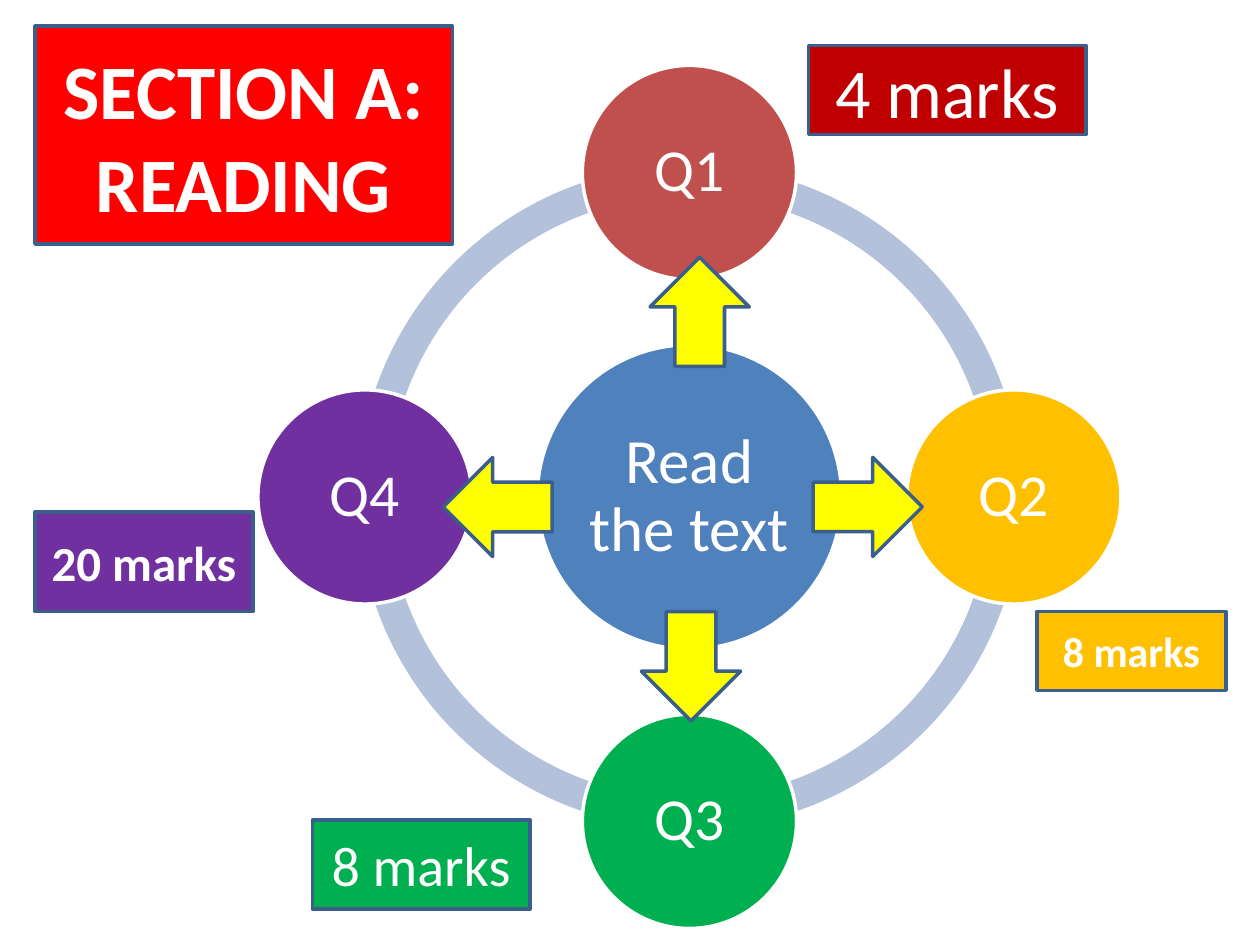
from pptx import Presentation
from pptx.dml.color import RGBColor
from pptx.enum import shapes, text
from pptx.util import Pt

KIND = shapes.MSO_SHAPE
WHITE, BORDER = "FFFFFF", "3A5F8C"
RED, YELLOW, AMBER, GREEN, PURPLE = "FF0000", "FFFF00", "FFC000", "00B050", "7030A0"


def paint(shape, fill, line=None):
    shape.fill.solid()
    shape.fill.fore_color.rgb = RGBColor.from_string(fill)
    if line:
        shape.line.color.rgb = RGBColor.from_string(line)
        shape.line.width = Pt(2)
    else:
        shape.line.fill.background()


def write(shape, words, size, bold=False):
    frame = shape.text_frame
    frame.text = words
    frame.word_wrap = True
    frame.auto_size = text.MSO_AUTO_SIZE.NONE
    frame.vertical_anchor = text.MSO_ANCHOR.MIDDLE
    para = frame.paragraphs[0]
    para.alignment = text.PP_ALIGN.CENTER
    para.font.name = "Calibri"
    para.font.size = Pt(size)
    para.font.bold = bold
    para.font.color.rgb = RGBColor.from_string(WHITE)


deck = Presentation()
deck.slide_width, deck.slide_height = Pt(720), Pt(540)
page = deck.slides.add_slide(deck.slide_layouts.get_by_name("Title Only"))

# Title block
title = page.shapes.title
title.left, title.top, title.width, title.height = Pt(20), Pt(15), Pt(238.5), Pt(124.5)
paint(title, RED, BORDER)
write(title, "SECTION A: READING", 44, True)

# Ring of four quarter arcs; angles are in units of 1/0.6 degree
center_x, center_y, ring = 394, 284, 379.4
for start in (180, 90, 0, 270):
    arc = page.shapes.add_shape(KIND.BLOCK_ARC, Pt(center_x - ring / 2),
                                Pt(center_y - ring / 2), Pt(ring), Pt(ring))
    arc.shadow.inherit = False
    arc.adjustments[0] = start * 0.6
    arc.adjustments[1] = (start + 90) % 360 * 0.6
    arc.adjustments[2] = 0.046
    paint(arc, "B3C1DB")

# Hub and question circles: words, direction, diameter, text size, colour
orbit = 185.4
for words, across, down, diameter, size, color in (
    ("Read the text", 0, 0, 174, 36, "4F81BD"),
    ("Q1", 0, -1, 122.4, 34, "C0504D"),
    ("Q2", 1, 0, 122.4, 34, AMBER),
    ("Q3", 0, 1, 122.4, 34, GREEN),
    ("Q4", -1, 0, 122.4, 34, PURPLE),
):
    circle = page.shapes.add_shape(
        KIND.OVAL, Pt(center_x + across * orbit - diameter / 2),
        Pt(center_y + down * orbit - diameter / 2), Pt(diameter), Pt(diameter))
    circle.shadow.inherit = False
    paint(circle, color, WHITE)
    write(circle, words, size)
    frame = circle.text_frame
    frame.margin_left = frame.margin_right = Pt(3.6)
    frame.margin_top = frame.margin_bottom = Pt(3.6)
    frame.paragraphs[0].line_spacing = 0.9

# Mark labels
for words, left, top, width, height, size, bold, color in (
    ("20 marks", 20, 292.5, 124.5, 57, 28, True, PURPLE),
    ("4 marks", 462, 26, 158.5, 51, 40, False, "C00000"),
    ("8 marks", 592.5, 349.5, 108, 45, 24, True, AMBER),
    ("8 marks", 178.5, 468.5, 124.5, 51, 32, False, GREEN),
):
    label = page.shapes.add_shape(KIND.RECTANGLE, Pt(left), Pt(top), Pt(width), Pt(height))
    label.shadow.inherit = False
    paint(label, color, BORDER)
    write(label, words, size, bold)

# Arrows from the hub to each question
for left, top, turn in ((371.5, 147, 0), (467.5, 258.5, 90),
                        (366.5, 349.5, 180), (256, 258.5, 270)):
    arrow = page.shapes.add_shape(KIND.UP_ARROW, Pt(left), Pt(top), Pt(56.7), Pt(62.4))
    arrow.shadow.inherit = False
    arrow.rotation = turn
    paint(arrow, YELLOW, BORDER)

deck.save("out.pptx")
